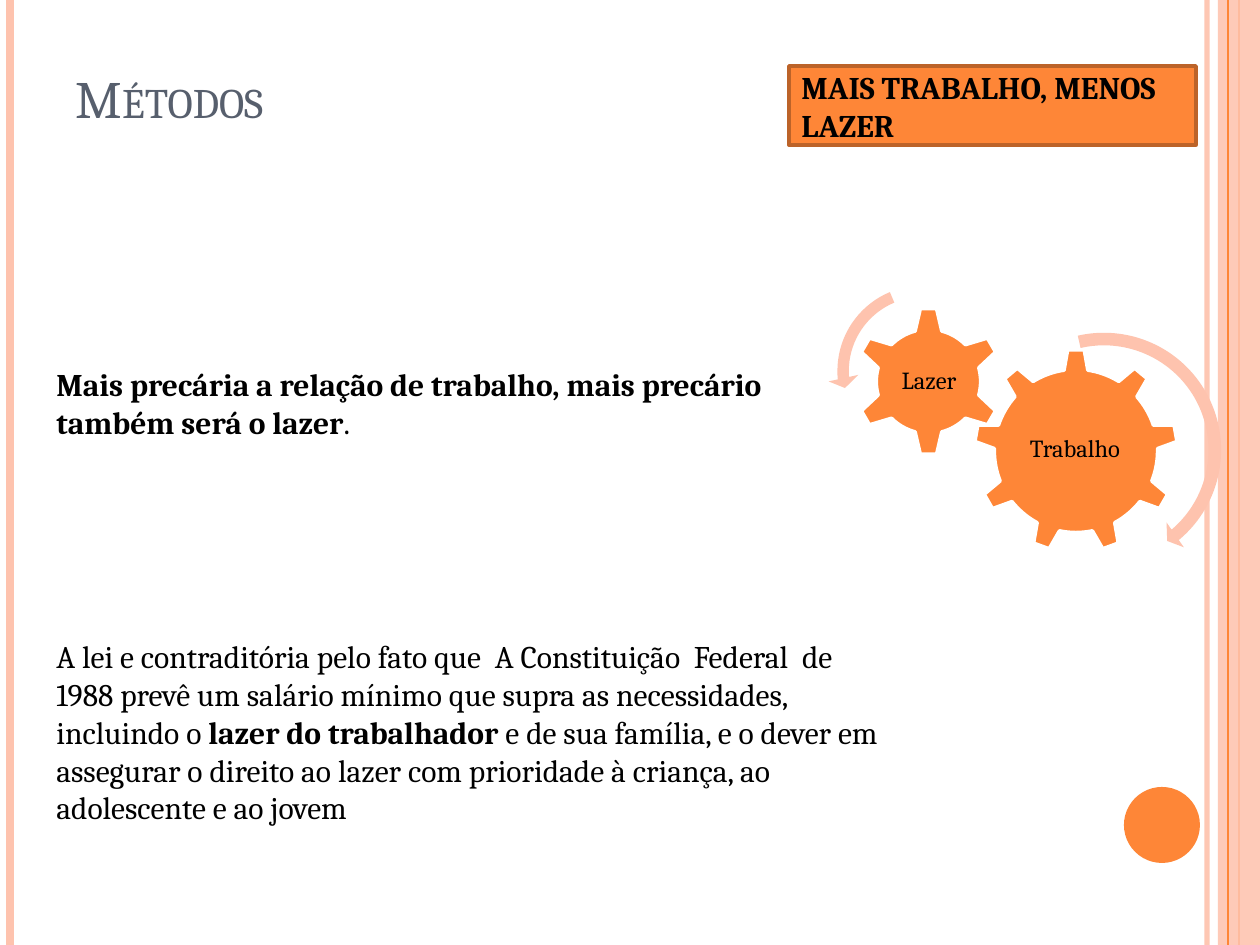
from lxml.etree import SubElement
from pptx import Presentation
from pptx.dml.color import RGBColor
from pptx.enum.shapes import MSO_CONNECTOR, MSO_SHAPE
from pptx.enum.text import MSO_ANCHOR as ANCHOR, PP_ALIGN as ALIGN
from pptx.oxml.ns import qn
from pptx.util import Emu, Pt

W, H = 1260, 945
SCALE = 914400 / 126
FONT = "Cambria"
ORANGE, PEACH, RUST = "FE8637", "FEC3AE", "BC6329"
BLACK, WHITE, SLATE = "000000", "FFFFFF", "575F6D"


def px(n):
    return Emu(round(n * SCALE))


def rgb(value):
    return RGBColor.from_string(value)


def set_alpha(fill, percent):
    color = fill._xPr.find(qn("a:solidFill"))[0]
    SubElement(color, qn("a:alpha"), val=str(percent * 1000))


def write(sp, runs, size=18, color=BLACK, align=ALIGN.LEFT, anchor=ANCHOR.TOP,
          spacing=None, margin=None):
    """Fill a shape with one paragraph of (text, bold) runs."""
    tf = sp.text_frame
    tf.word_wrap = True
    tf.vertical_anchor = anchor
    if margin is not None:
        tf.margin_left = tf.margin_right = px(margin)
        tf.margin_top = tf.margin_bottom = px(margin)
    p = tf.paragraphs[0]
    p.alignment = align
    if spacing:
        p.line_spacing = spacing
    for text, bold in runs:
        r = p.add_run()
        r.text = text
        r.font.name, r.font.size, r.font.bold = FONT, Pt(size), bold
        r.font.color.rgb = rgb(color)
    return p


def add_shape(shapes, kind, box, fill, line=None, alpha=None, adjustments=()):
    sp = shapes.add_shape(kind, *map(px, box))
    sp.shadow.inherit = False
    sp.fill.solid()
    sp.fill.fore_color.rgb = rgb(fill)
    if alpha:
        set_alpha(sp.fill, alpha)
    if line:
        sp.line.color.rgb = rgb(line)
        sp.line.width = Pt(2)
    else:
        sp.line.fill.background()
    for i, value in enumerate(adjustments):
        sp.adjustments[i] = value
    return sp


def add_text(shapes, box, runs, **fmt):
    sp = shapes.add_textbox(*map(px, box))
    write(sp, runs, **fmt)
    return sp


def add_stripe(shapes, x, color, width, alpha=None):
    line = shapes.add_connector(MSO_CONNECTOR.STRAIGHT, px(x), px(0), px(x), px(H))
    line.line.color.rgb = rgb(color)
    line.line.width = Pt(width)
    if alpha:
        set_alpha(line.line.fill, alpha)
    SubElement(line._element.spPr, qn("a:effectLst"))


def add_frame(shapes):
    # Edge stripes, right band and corner disc
    add_stripe(shapes, 1207, PEACH, 3, alpha=93)
    add_stripe(shapes, 10, PEACH, 4.5)
    add_stripe(shapes, 1239, ORANGE, 1.5)
    add_shape(shapes, MSO_SHAPE.RECTANGLE, (1218, 0, 42, H), PEACH, alpha=87)
    add_stripe(shapes, 1228, ORANGE, 0.75)
    add_shape(shapes, MSO_SHAPE.OVAL, (1124, 787, 76, 76), ORANGE)


def add_title(title, box, text):
    title.left, title.top, title.width, title.height = map(px, box)
    p = write(title, [(text, False)], size=30, color=SLATE, anchor=ANCHOR.BOTTOM)
    p.runs[0].font._element.set("cap", "small")


def add_banner(shapes, box, text):
    sp = add_shape(shapes, MSO_SHAPE.RECTANGLE, box, ORANGE, line=RUST)
    write(sp, [(text, True)], anchor=ANCHOR.MIDDLE)


def add_gears(shapes, x, y):
    """Two meshing gears with their turning arrows, from the corner x, y."""
    group = shapes.add_group_shape().shapes
    gears = [
        (MSO_SHAPE.GEAR_9, (146, 73, 204, 204), "Trabalho", (186, 121, 122, 105)),
        (MSO_SHAPE.GEAR_6, (26, 31, 149, 149), "Lazer", (64, 69, 74, 73)),
    ]
    arrows = [
        (MSO_SHAPE.CIRCULAR_ARROW, (150, 48, 252, 252),
         (0.05, 3.13, 30, 154.27, 0.06)),
        (MSO_SHAPE.LEFT_CIRCULAR_ARROW, (0, 0, 190, 190),
         (0.06, 4.3, 104.89, 148.38, 0.08)),
    ]

    def place(box):
        return (x + box[0], y + box[1], *box[2:])

    for kind, box, label, label_box in gears:
        add_shape(group, kind, place(box), ORANGE, line=WHITE)
        add_text(group, place(label_box), [(label, False)], size=14,
                 align=ALIGN.CENTER, anchor=ANCHOR.MIDDLE, spacing=0.9, margin=2)
    for kind, box, adjustments in arrows:
        add_shape(group, kind, place(box), PEACH, adjustments=adjustments)


def main():
    prs = Presentation()
    prs.slide_width, prs.slide_height = px(W), px(H)
    s = prs.slides.add_slide(prs.slide_layouts[5])
    shapes = s.shapes

    add_frame(shapes)
    add_title(shapes.title, (63, 38, 1029, 97), "Métodos")
    add_banner(shapes, (789, 66, 407, 79), "MAIS TRABALHO, MENOS LAZER")
    add_gears(shapes, 828, 276)

    # Body text
    add_text(shapes, (44, 359, 784, 89), [
        ("Mais precária a relação de trabalho, mais precário também será o lazer", True),
        (".", False),
    ])
    add_text(shapes, (44, 631, 856, 204), [
        ("A lei e contraditória pelo fato que  A Constituição  Federal  de 1988 prevê "
         "um salário mínimo que supra as necessidades, incluindo o ", False),
        ("lazer do trabalhador ", True),
        ("e de sua família, e o dever em assegurar o direito ao lazer com prioridade "
         "à criança, ao adolescente e ao jovem", False),
    ])
    prs.save("out.pptx")


if __name__ == "__main__":
    main()
